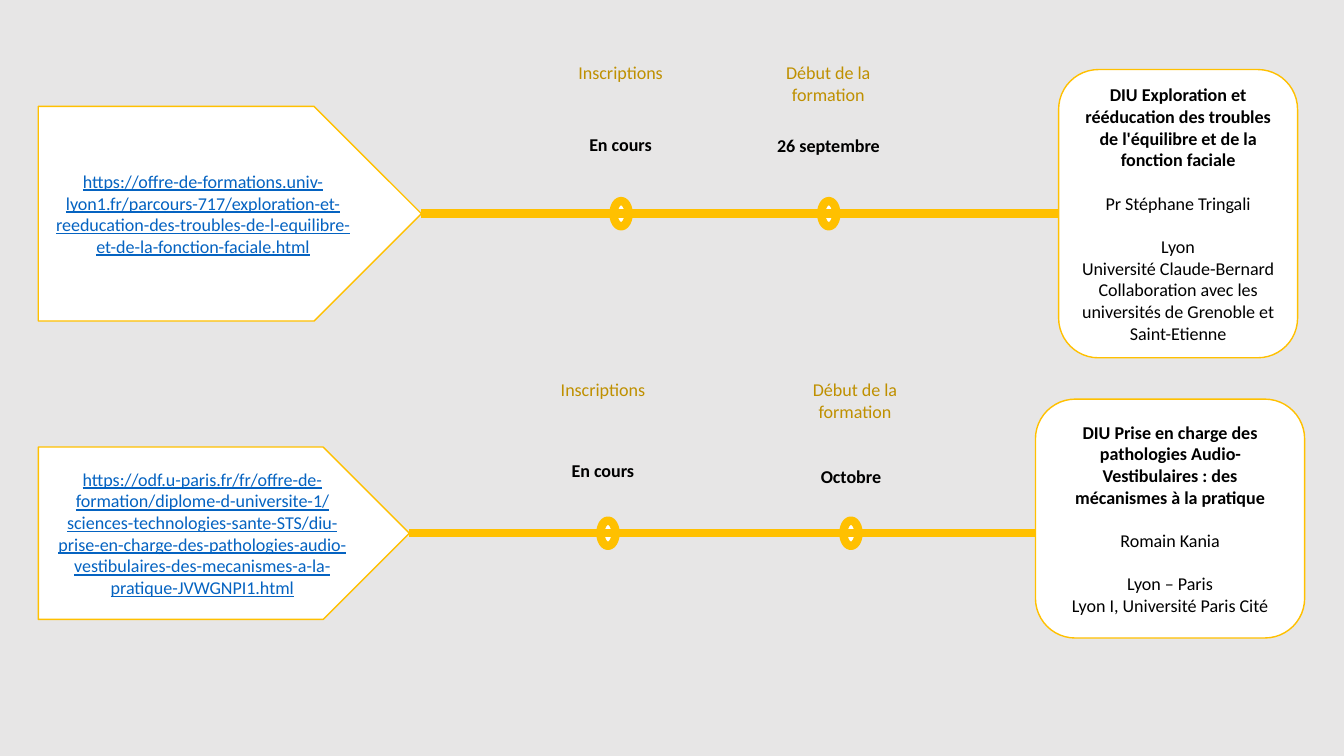
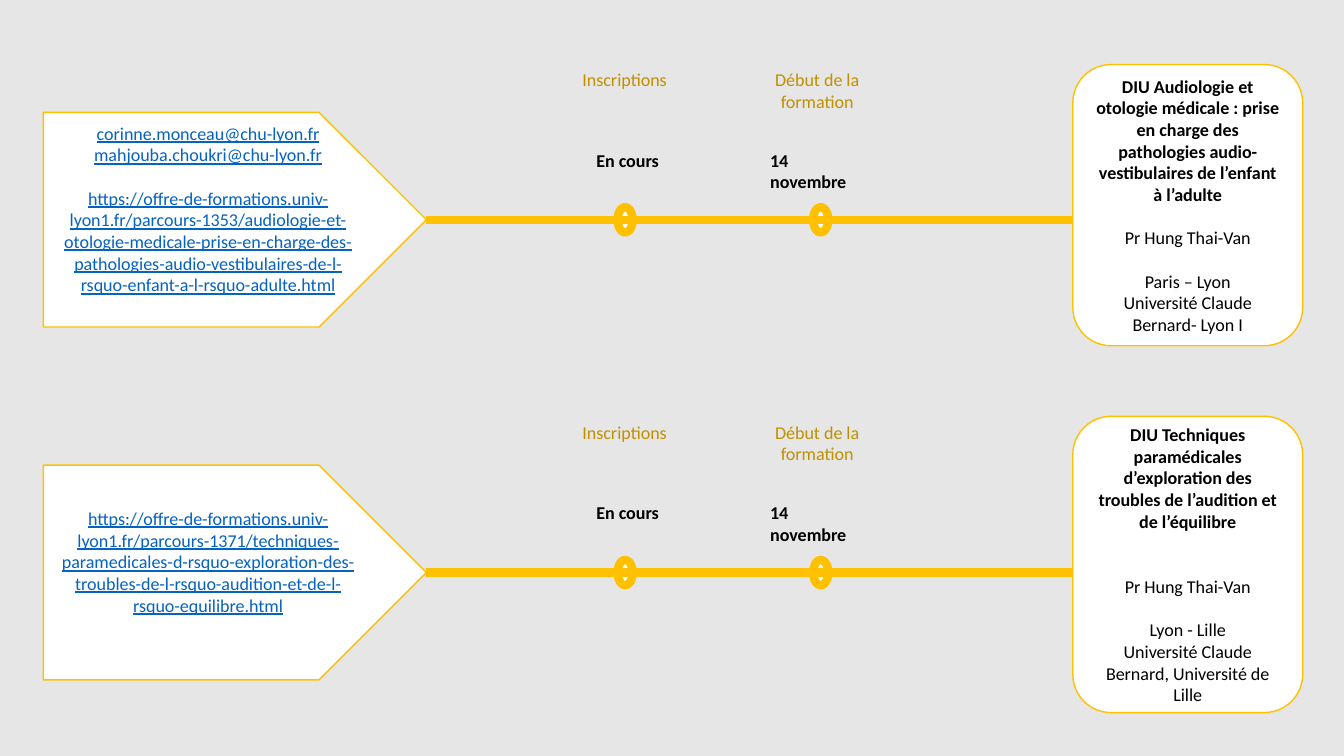
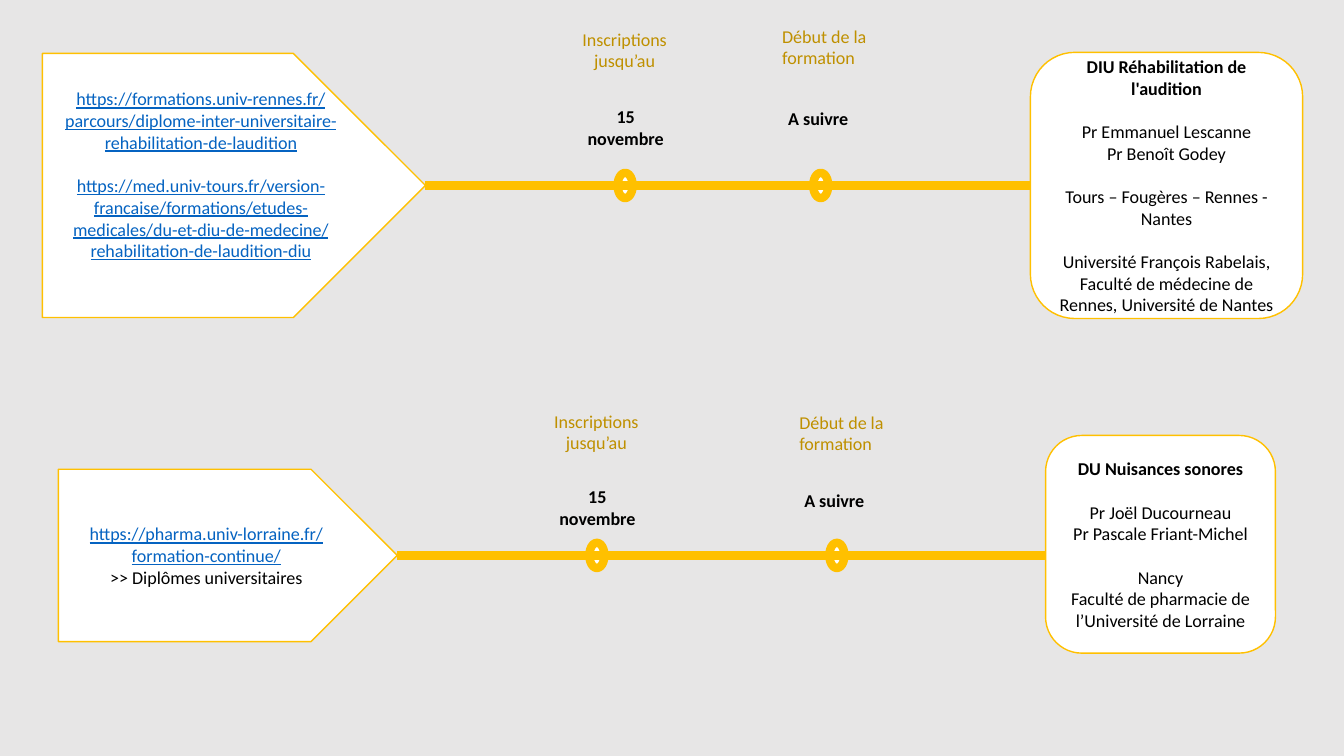
from dataclasses import dataclass

import pptx
import pptx.dml.color
import pptx.enum.shapes
import pptx.enum.text
import pptx.oxml.ns
import pptx.util
from lxml import etree

Inches = pptx.util.Inches
Pt = pptx.util.Pt
RGBColor = pptx.dml.color.RGBColor
Shape = pptx.enum.shapes.MSO_SHAPE
Align = pptx.enum.text.PP_ALIGN

GREY = RGBColor(0xE7, 0xE6, 0xE6)
WHITE = RGBColor(0xFF, 0xFF, 0xFF)
BLACK = RGBColor(0, 0, 0)
AMBER = RGBColor(0xFF, 0xC0, 0x00)
GOLD = RGBColor(0xBF, 0x90, 0x00)
LINK = RGBColor(0x05, 0x63, 0xC1)

FONT = "Calibri"
TEXT_SIZE = Pt(12.9)
LINE_GAP = Pt(15.5)
THIN = Pt(1)
THICK = Pt(6)
DOT_WIDTH, DOT_HEIGHT = 0.15, 0.25


@dataclass
class Box:
    left: float
    top: float
    width: float
    height: float

    @property
    def middle(self):
        return self.top + self.height / 2

    @property
    def right(self):
        return self.left + self.width

    def lengths(self):
        return [Inches(n) for n in (self.left, self.top, self.width, self.height)]


@dataclass
class Caption:
    text: str
    shift: float
    rise: float
    width: float = 1.13
    lines: int = 1
    align: int = Align.CENTER


@dataclass
class Milestone:
    centre: float
    label: Caption
    value: Caption


@dataclass
class Line:
    text: str
    color: RGBColor = BLACK
    bold: bool = False
    underline: bool = False
    gap: int = 0


def write(shape, lines, align=Align.CENTER):
    frame = shape.text_frame
    frame.word_wrap = True
    for index, line in enumerate(lines):
        para = frame.add_paragraph() if index else frame.paragraphs[0]
        para.text = line.text
        para.alignment = align
        para.space_before = LINE_GAP * line.gap
        for span in para.runs:
            span.font.name = FONT
            span.font.size = TEXT_SIZE
            span.font.bold = line.bold
            span.font.underline = line.underline
            span.font.color.rgb = line.color


def outlined(page, kind, box, weight=THIN):
    shape = page.shapes.add_shape(kind, *box.lengths())
    shape.shadow.inherit = False
    shape.fill.solid()
    shape.fill.fore_color.rgb = WHITE
    shape.line.color.rgb = AMBER
    shape.line.width = weight
    return shape


def link_plate(page, box, lines, space_below):
    plate = outlined(page, Shape.PENTAGON, box)
    plate.text_frame.vertical_anchor = pptx.enum.text.MSO_ANCHOR.MIDDLE
    if space_below:
        plate.text_frame.margin_bottom = Inches(0.05) + LINE_GAP
    write(plate, lines)
    return plate


def course_card(page, box, title, groups, title_gap):
    card = outlined(page, Shape.ROUNDED_RECTANGLE, box)
    card.text_frame.vertical_anchor = pptx.enum.text.MSO_ANCHOR.MIDDLE
    lines = [Line(title, bold=True)]
    for number, group in enumerate(groups):
        group_gap = 1 if number else title_gap
        lines += [Line(text, gap=0 if place else group_gap)
                  for place, text in enumerate(group)]
    write(card, lines)
    return card


def caption(page, centre, axis, item, color, bold):
    box = Box(centre + item.shift, axis - item.rise, item.width,
              0.11 + 0.21 * item.lines)
    label = page.shapes.add_textbox(*box.lengths())
    write(label, [Line(item.text, color, bold)], item.align)
    label.text_frame.auto_size = pptx.enum.text.MSO_AUTO_SIZE.SHAPE_TO_FIT_TEXT


def milestone(page, axis, stop):
    dot = Box(stop.centre - DOT_WIDTH / 2, axis - DOT_HEIGHT / 2,
              DOT_WIDTH, DOT_HEIGHT)
    outlined(page, Shape.OVAL, dot, THICK)
    caption(page, stop.centre, axis, stop.label, GOLD, False)
    caption(page, stop.centre, axis, stop.value, BLACK, True)


def axis_line(page, plate, card, plate_box, card_box):
    axis = Inches(plate_box.middle)
    line = page.shapes.add_connector(
        pptx.enum.shapes.MSO_CONNECTOR.STRAIGHT,
        Inches(plate_box.right), axis, Inches(card_box.left), axis)
    line.line.color.rgb = AMBER
    line.line.width = THICK
    etree.SubElement(line._element.spPr, pptx.oxml.ns.qn("a:effectLst"))
    line.begin_connect(plate, 3)
    if abs(card_box.middle - plate_box.middle) < 0.01:
        line.end_connect(card, 3 - 2)


def course_row(page, axis, plate_size, links, card_box, title, groups, stops,
               space_below=False, title_gap=1):
    left, width, height = plate_size
    plate_box = Box(left, axis - height / 2, width, height)
    for stop in stops:
        milestone(page, axis, stop)
    plate = link_plate(page, plate_box, links, space_below)
    card = course_card(page, card_box, title, groups, title_gap)
    axis_line(page, plate, card, plate_box, card_box)


def link(text, gap=0):
    return Line(text, LINK, underline=True, gap=gap)


def start_label(shift, rise, width=1.13, align=Align.CENTER):
    return Caption("Début de la formation", shift, rise, width, 2, align)


def balance_slide(page):
    course_row(
        page, 2.12, (0.38, 3.8, 2.13),
        [link("https://offre-de-formations.univ-lyon1.fr/parcours-717/exploration-et-reeducation-des-troubles-de-l-equilibre-et-de-la-fonction-faciale.html")],
        Box(10.5, 0.69, 2.37, 2.86),
        "DIU Exploration et rééducation des troubles de l'équilibre et de la fonction faciale",
        [["Pr Stéphane Tringali"],
         ["Lyon", "Université Claude-Bernard\nCollaboration avec les universités de Grenoble et Saint-Etienne"]],
        [Milestone(6.16, Caption("Inscriptions", -0.57, 1.56),
                   Caption("En cours", -0.57, 0.85)),
         Milestone(8.22, start_label(-0.57, 1.56),
                   Caption("26 septembre", -0.61, 0.84, 1.44, align=Align.LEFT))])
    course_row(
        page, 5.29, (0.38, 3.68, 1.71),
        [link("https://odf.u-paris.fr/fr/offre-de-formation/diplome-d-universite-1/sciences-technologies-sante-STS/diu-prise-en-charge-des-pathologies-audio-vestibulaires-des-mecanismes-a-la-pratique-JVWGNPI1.html")],
        Box(10.27, 3.96, 2.67, 2.37),
        "DIU Prise en charge des pathologies Audio-Vestibulaires : des mécanismes à la pratique",
        [["Romain Kania"], ["Lyon – Paris", "Lyon I, Université Paris Cité"]],
        [Milestone(6.03, Caption("Inscriptions", -0.67, 1.58, 1.24),
                   Caption("En cours", -0.67, 0.78, 1.24)),
         Milestone(8.44, start_label(-0.58, 1.58, 1.24),
                   Caption("Octobre", -0.62, 0.72, 1.24))])


def hearing_slide(page):
    stops = [
        Milestone(6.2, Caption("Inscriptions", -0.57, 1.55),
                  Caption("En cours", -0.54, 0.75)),
        Milestone(8.14, start_label(-0.6, 1.55),
                  Caption("14 novembre", -0.6, 0.75, lines=2, align=Align.LEFT))]
    plate_size = (0.43, 3.8, 2.13)
    course_row(
        page, 2.18, plate_size,
        [link("corinne.monceau@chu-lyon.fr\nmahjouba.choukri@chu-lyon.fr"),
         link("https://offre-de-formations.univ-lyon1.fr/parcours-1353/audiologie-et-otologie-medicale-prise-en-charge-des-pathologies-audio-vestibulaires-de-l-rsquo-enfant-a-l-rsquo-adulte.html", 1)],
        Box(10.64, 0.64, 2.28, 2.79),
        "DIU Audiologie et otologie médicale : prise en charge des pathologies audio-vestibulaires de l’enfant à l’adulte",
        [["Pr Hung Thai-Van"],
         ["Paris – Lyon\nUniversité Claude Bernard- Lyon I"]],
        stops, space_below=True)
    course_row(
        page, 5.68, plate_size,
        [link("https://offre-de-formations.univ-lyon1.fr/parcours-1371/techniques-paramedicales-d-rsquo-exploration-des-troubles-de-l-rsquo-audition-et-de-l-rsquo-equilibre.html")],
        Box(10.64, 4.13, 2.28, 2.94),
        "DIU Techniques paramédicales d’exploration des troubles de l’audition et de l’équilibre",
        [["Pr Hung Thai-Van"],
         ["Lyon - Lille\nUniversité Claude Bernard, Université de Lille"]],
        stops, space_below=True, title_gap=2)


def rehabilitation_slide(page):
    deadline = Caption("15 novembre", -0.56, 0.84, lines=2)
    course_row(
        page, 1.84, (0.42, 3.8, 2.62),
        [link("https://formations.univ-rennes.fr/parcours/diplome-inter-universitaire-rehabilitation-de-laudition"),
         link("https://med.univ-tours.fr/version-francaise/formations/etudes-medicales/du-et-diu-de-medecine/rehabilitation-de-laudition-diu", 1)],
        Box(10.22, 0.52, 2.7, 2.64),
        "DIU Réhabilitation de l'audition",
        [["Pr Emmanuel Lescanne", "Pr Benoît Godey"],
         ["Tours – Fougères – Rennes - Nantes"],
         ["Université François Rabelais, Faculté de médecine de Rennes, Université de Nantes"]],
        [Milestone(6.2, Caption("Inscriptions jusqu’au", -0.57, 1.61, lines=2),
                   deadline),
         Milestone(8.14, start_label(-0.48, 1.64, align=Align.LEFT),
                   Caption("A suivre", -0.59, 0.82))],
        space_below=True)
    course_row(
        page, 5.51, (0.58, 3.36, 1.71),
        [link("https://pharma.univ-lorraine.fr/formation-continue/"),
         Line(">> Diplômes universitaires")],
        Box(10.37, 4.32, 2.28, 2.16),
        "DU Nuisances sonores",
        [["Pr Joël Ducourneau", "Pr Pascale Friant-Michel"],
         ["Nancy", "Faculté de pharmacie de l’Université de Lorraine"]],
        [Milestone(5.92, Caption("Inscriptions\njusqu’au", -0.57, 1.49, lines=2),
                   Caption("15 novembre", -0.56, 0.74, lines=2)),
         Milestone(8.3, start_label(-0.47, 1.48, align=Align.LEFT),
                   Caption("A suivre", -0.59, 0.7))])


def main():
    deck = pptx.Presentation()
    deck.slide_width = Inches(13.33)
    deck.slide_height = Inches(7.5)
    backdrop = deck.slide_master.background.fill
    backdrop.solid()
    backdrop.fore_color.rgb = GREY
    for build in (balance_slide, hearing_slide, rehabilitation_slide):
        build(deck.slides.add_slide(deck.slide_layouts[6]))
    deck.save("out.pptx")


if __name__ == "__main__":
    main()
